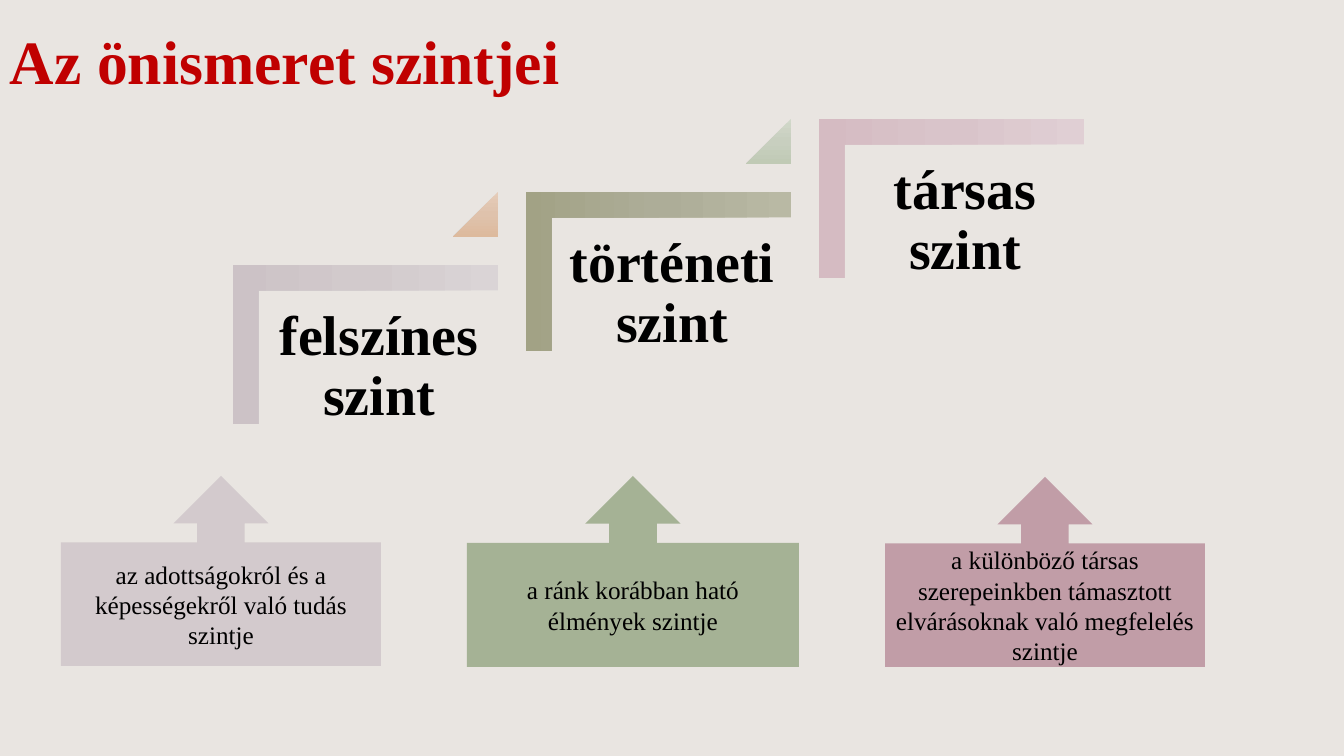
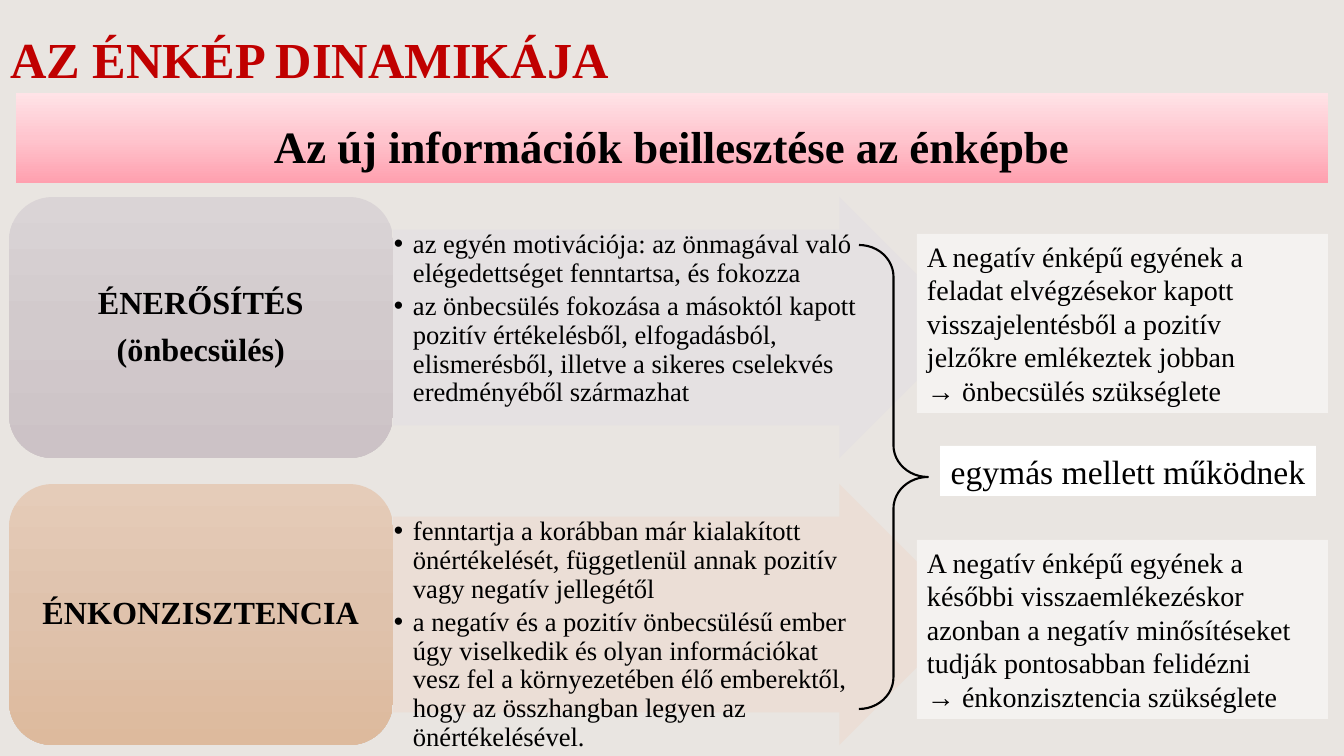
"""Build two slides on the levels of self-knowledge and the dynamics of the self-image."""
from copy import deepcopy
from dataclasses import dataclass

from lxml.etree import SubElement
from pptx import Presentation
from pptx.dml.color import RGBColor
from pptx.enum.shapes import MSO_SHAPE
from pptx.enum.text import MSO_ANCHOR, PP_ALIGN
from pptx.oxml.ns import qn
from pptx.util import Emu, Pt

SCALE = 914400 / 100.8


@dataclass(frozen=True)
class Theme:
    font: str = "Times New Roman"
    back: str = "E9E5E1"
    title: str = "C00000"
    ink: str = "000000"
    white: str = "FFFFFF"
    note: str = "F4F2F0"
    mauve: tuple = ("DAD4D6", "D2CACC", "CCC2C6")
    olive: tuple = ("B9B9A4", "ADAD98", "A2A285")
    rose: tuple = ("E0CFD4", "D9C4CA", "D5BBC2")
    peach: tuple = ("E5CCB9", "DFC2AC", "DDBA9D")
    sage: tuple = ("D1D8CA", "C8CFBF", "C0CAB5")
    pink: tuple = ("FFE3E7", "FFC5CE", "FFA0AF")
    title_large: int = 44
    title_small: int = 36
    level: int = 40
    banner: int = 32
    label: int = 23
    link: int = 24
    remark: int = 20
    bullet: int = 19
    callout: int = 18


T = Theme()

LEVELS = [
    ("felszínes szint", T.mauve, T.peach),
    ("történeti szint", T.olive, T.sage),
    ("társas szint", T.rose, None),
]
CALLOUTS = [
    ("az adottságokról és a képességekről való tudás szintje",
     "D3CACD", (61, 476, 320, 190)),
    ("a ránk korábban ható élmények szintje",
     "A5B295", (467, 476, 332, 191)),
    ("a különböző társas szerepeinkben támasztott elvárásoknak való megfelelés szintje",
     "C19DA7", (885, 477, 320, 190)),
]
PROCESSES = [
    {
        "label": ["ÉNERŐSÍTÉS", "(önbecsülés)"],
        "colors": T.mauve,
        "arrow": "E5E1E3",
        "points": [
            "az egyén motivációja: az önmagával való elégedettséget fenntartsa, és fokozza",
            "az önbecsülés fokozása a másoktól kapott pozitív értékelésből, elfogadásból, "
            "elismerésből, illetve a sikeres cselekvés eredményéből származhat",
        ],
    },
    {
        "label": ["ÉNKONZISZTENCIA"],
        "colors": T.peach,
        "arrow": "ECDED5",
        "points": [
            "fenntartja a korábban már kialakított önértékelését, függetlenül annak pozitív "
            "vagy negatív jellegétől",
            "a negatív és a pozitív önbecsülésű ember úgy viselkedik és olyan információkat "
            "vesz fel a környezetében élő emberektől, hogy az összhangban legyen az "
            "önértékelésével.",
        ],
    },
]
REMARKS = [
    (234, ["A negatív énképű egyének a feladat elvégzésekor kapott visszajelentésből a "
           "pozitív jelzőkre emlékeztek jobban", "→ önbecsülés szükséglete"]),
    (540, ["A negatív énképű egyének a későbbi visszaemlékezéskor azonban a negatív "
           "minősítéseket tudják pontosabban felidézni", "→ énkonzisztencia szükséglete"]),
]


def px(*values):
    return [Emu(round(v * SCALE)) for v in values]


def rgb(color):
    return RGBColor.from_string(color)


def add_bullet(p, indent):
    pPr = p._p.get_or_add_pPr()
    pPr.set("marL", str(px(indent)[0]))
    pPr.set("indent", str(-px(indent)[0]))
    SubElement(pPr, qn("a:buFont"), typeface="Arial")
    SubElement(pPr, qn("a:buChar"), char="•")


def write(sp, paragraphs, *, size, bold=False, color=T.ink, align=PP_ALIGN.CENTER,
          anchor=MSO_ANCHOR.MIDDLE, spacing=1.0, after=0, inset=(10, 5, 10, 5), bullet=0):
    tf = sp.text_frame
    tf.word_wrap = True
    tf.vertical_anchor = anchor
    tf.margin_left, tf.margin_top, tf.margin_right, tf.margin_bottom = px(*inset)
    for i, text in enumerate(paragraphs):
        p = tf.add_paragraph() if i else tf.paragraphs[0]
        p.alignment = align
        p.line_spacing = spacing
        p.space_after = Pt(after)
        if bullet:
            add_bullet(p, bullet)
        r = p.add_run()
        r.text = text
        r.font.name = T.font
        r.font.size = Pt(size)
        r.font.bold = bold
        r.font.color.rgb = rgb(color)


def add_text(s, box, paragraphs, **fmt):
    write(s.shapes.add_textbox(*px(*box)), paragraphs, **fmt)


def fill_gradient(sp, colors):
    sp.fill.gradient()
    stops = sp._element.spPr.find(".//" + qn("a:gsLst"))
    stops.insert(1, deepcopy(stops[0]))
    for i, (stop, color) in enumerate(zip(sp.fill.gradient_stops, colors)):
        stop.position = i / 2
        stop.color.rgb = rgb(color)
    sp.fill.gradient_angle = 270


def add_shape(s, kind, box, fill=None, *, adj=(), alpha=100):
    sp = s.shapes.add_shape(kind, *px(*box))
    sp.shadow.inherit = False
    sp.line.fill.background()
    for i, value in enumerate(adj):
        sp.adjustments[i] = value
    if fill is None:
        sp.fill.background()
    elif isinstance(fill, tuple):
        fill_gradient(sp, fill)
    else:
        sp.fill.solid()
        sp.fill.fore_color.rgb = rgb(fill)
        if alpha < 100:
            clr = sp._element.spPr.find(qn("a:solidFill"))[0]
            SubElement(clr, qn("a:alpha"), val=str(alpha * 1000))
    return sp


def add_slide(prs, title, size, width, height):
    s = prs.slides.add_slide(prs.slide_layouts[6])
    s.background.fill.solid()
    s.background.fill.fore_color.rgb = rgb(T.back)
    add_text(s, (0, 0, width, height), [title], size=size, bold=True,
             color=T.title, align=PP_ALIGN.LEFT)
    return s


def build_levels(prs):
    s = add_slide(prs, "Az önismeret szintjei", T.title_large, 571, 119)
    wide, high, rise = 265, 159, 73
    for i, (text, colors, step) in enumerate(LEVELS):
        x, y = 233 + 293 * i, 265 - rise * i
        shift = (wide - high) // 2
        corner = add_shape(s, MSO_SHAPE.CORNER, (x + shift, y - shift, high, wide),
                           colors, adj=(0.16, 0.16))
        corner.rotation = 90
        add_text(s, (x + 26, y + 25, 240, 210), [text], size=T.level, bold=True,
                 anchor=MSO_ANCHOR.TOP, spacing=0.9, inset=(16, 17, 16, 17))
        if step:
            add_shape(s, MSO_SHAPE.ISOSCELES_TRIANGLE, (x + 220, y - rise, 45, 45),
                      step, adj=(1,))
    for text, color, box in CALLOUTS:
        sp = add_shape(s, MSO_SHAPE.UP_ARROW_CALLOUT, box, color)
        write(sp, [text], size=T.callout)


def build_dynamics(prs):
    s = add_slide(prs, "AZ ÉNKÉP DINAMIKÁJA", T.title_small, 722, 117)
    banner = add_shape(s, MSO_SHAPE.RECTANGLE, (16, 93, 1312, 90), T.pink)
    write(banner, ["Az új információk beillesztése az énképbe"], size=T.banner,
          bold=True, spacing=1.1, inset=(10, 14, 10, 5))
    for i, process in enumerate(PROCESSES):
        y = 197 + 287 * i
        add_shape(s, MSO_SHAPE.RIGHT_ARROW, (393, y, 577, 261), process["arrow"],
                  adj=(0.75, 0.5), alpha=90)
        add_text(s, (393, y + 33, 478, 196), process["points"], size=T.bullet,
                 align=PP_ALIGN.LEFT, anchor=MSO_ANCHOR.TOP, spacing=0.9, after=3,
                 inset=(1, 1, 1, 1), bullet=19)
        label = add_shape(s, MSO_SHAPE.ROUNDED_RECTANGLE, (9, y, 384, 261),
                          process["colors"])
        write(label, process["label"], size=T.label, bold=True, spacing=0.9, after=9)
    brace = add_shape(s, MSO_SHAPE.RIGHT_BRACE, (859, 245, 69, 464), adj=(0.46, 0.5))
    brace.line.color.rgb = rgb(T.ink)
    brace.line.width = Pt(1.5)
    link = add_shape(s, MSO_SHAPE.RECTANGLE, (940, 446, 376, 50), T.white)
    write(link, ["egymás mellett működnek"], size=T.link, anchor=MSO_ANCHOR.TOP)
    for y, lines in REMARKS:
        remark = add_shape(s, MSO_SHAPE.RECTANGLE, (917, y, 411, 179), T.note)
        write(remark, lines, size=T.remark, align=PP_ALIGN.LEFT, anchor=MSO_ANCHOR.TOP)


def main():
    prs = Presentation()
    prs.slide_width, prs.slide_height = px(1344, 756)
    build_levels(prs)
    build_dynamics(prs)
    prs.save("out.pptx")


if __name__ == "__main__":
    main()
